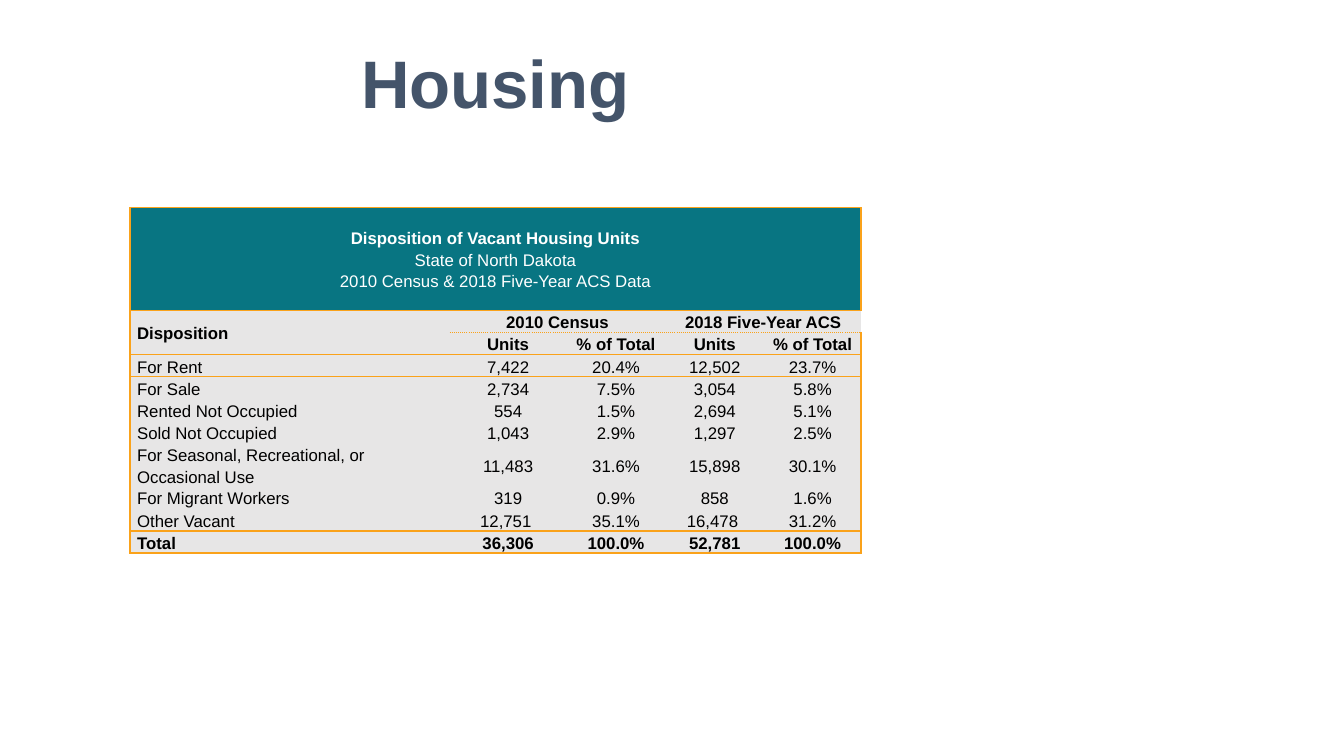
"""Build a slide with a table of vacant housing units in North Dakota."""
from pptx import Presentation
from pptx.dml.color import RGBColor
from pptx.enum.text import MSO_ANCHOR, PP_ALIGN
from pptx.oxml import parse_xml
from pptx.oxml.ns import nsdecls
from pptx.util import Inches, Pt

TITLE = "Housing"
HEADING = (
    "Disposition of Vacant Housing Units\n"
    "State of North Dakota\n"
    "2010 Census & 2018 Five-Year ACS Data"
)
ROWS = [
    (HEADING, "", "", "", ""),
    ("Disposition", "2010 Census", "", "2018 Five-Year ACS", ""),
    ("", "Units", "% of Total", "Units", "% of Total"),
    ("For Rent", "7,422", "20.4%", "12,502", "23.7%"),
    ("For Sale", "2,734", "7.5%", "3,054", "5.8%"),
    ("Rented Not Occupied", "554", "1.5%", "2,694", "5.1%"),
    ("Sold Not Occupied", "1,043", "2.9%", "1,297", "2.5%"),
    ("For Seasonal, Recreational, or Occasional Use", "11,483", "31.6%", "15,898", "30.1%"),
    ("For Migrant Workers", "319", "0.9%", "858", "1.6%"),
    ("Other Vacant", "12,751 ", "35.1%", "16,478 ", "31.2%"),
    ("Total", "36,306", "100.0%", "52,781", "100.0%"),
]
MERGES = [((0, 0), (0, 4)), ((1, 0), (2, 0)), ((1, 1), (1, 2)), ((1, 3), (1, 4))]
BOLD_ROWS = {1, 2, len(ROWS) - 1}
COLUMN_WIDTHS = [3.17, 1.16, 0.98, 0.98, 0.96]
HEADING_HEIGHT, ROW_HEIGHT = 1.02, 0.22
COLORS = {
    "title": "44546A",
    "heading": "087582",
    "body": "E7E6E6",
    "rule": "FAA21A",
    "white": "FFFFFF",
    "black": "000000",
}
FONT = "Arial"
THIN, DOTTED, THICK = (1, "solid"), (1, "sysDot"), (2.25, "solid")
RULES_ABOVE = {0: THIN, 1: THIN, 2: DOTTED, 3: THIN, len(ROWS) - 1: THICK, len(ROWS): THIN}
NO_GRID_STYLE = "{2D5ABB26-0587-4C30-8999-92F81FD0307C}"


def color(name):
    """Return a palette colour."""
    return RGBColor.from_string(COLORS[name])


def style_font(font, size, color_name, bold):
    """Set face, size, colour and weight."""
    font.name, font.size, font.bold = FONT, Pt(size), bold
    font.color.rgb = color(color_name)


def cell_rules(row, column):
    """Return the rules around a cell, in schema order."""
    inside_label = column == 0
    sides = {
        "L": THIN if column == 0 else None,
        "R": THIN if column == len(COLUMN_WIDTHS) - 1 or row == 0 else None,
        "T": None if inside_label and row == 2 else RULES_ABOVE.get(row),
        "B": None if inside_label and row == 1 else RULES_ABOVE.get(row + 1),
    }
    return [(side, rule) for side, rule in sides.items() if rule]


def draw_rules(cell, rules):
    """Add border lines ahead of the cell fill."""
    properties = cell._tc.get_or_add_tcPr()
    for position, (side, (width, dash)) in enumerate(rules):
        line = parse_xml(
            f'<a:ln{side} {nsdecls("a")} w="{Pt(width)}"><a:solidFill>'
            f'<a:srgbClr val="{COLORS["rule"]}"/></a:solidFill>'
            f'<a:prstDash val="{dash}"/></a:ln{side}>'
        )
        properties.insert(position, line)


def fill_cell(cell, row, column):
    """Write and format one table cell."""
    is_heading = row == 0
    cell.text = ROWS[row][column]
    cell.vertical_anchor = MSO_ANCHOR.MIDDLE
    cell.margin_left = cell.margin_right = Inches(0.07)
    cell.margin_top = cell.margin_bottom = 0
    cell.fill.solid()
    cell.fill.fore_color.rgb = color("heading" if is_heading else "body")
    for number, paragraph in enumerate(cell.text_frame.paragraphs):
        centred = is_heading or column > 0
        paragraph.alignment = PP_ALIGN.CENTER if centred else PP_ALIGN.LEFT
        paragraph.line_spacing = 1.15
        bold = number == 0 if is_heading else row in BOLD_ROWS
        style_font(paragraph.font, 12, "white" if is_heading else "black", bold)
    draw_rules(cell, cell_rules(row, column))


def add_title(slide):
    """Place the slide title."""
    title = slide.shapes.title
    title.left, title.top = Inches(0.28), Inches(0.33)
    title.width, title.height = Inches(9.27), Inches(0.96)
    title.text_frame.text = TITLE
    title.text_frame.vertical_anchor = MSO_ANCHOR.MIDDLE
    paragraph = title.text_frame.paragraphs[0]
    paragraph.alignment = PP_ALIGN.CENTER
    style_font(paragraph.font, 48, "title", True)


def add_vacancy_table(slide):
    """Place the table of vacant units."""
    heights = [HEADING_HEIGHT] + [ROW_HEIGHT] * (len(ROWS) - 1)
    frame = slide.shapes.add_table(
        len(ROWS), len(COLUMN_WIDTHS), Inches(1.29), Inches(2.06),
        Inches(sum(COLUMN_WIDTHS)), Inches(sum(heights)),
    )
    vacancies = frame.table
    vacancies._tbl.tblPr.find("{*}tableStyleId").text = NO_GRID_STYLE
    vacancies.horz_banding = False
    for column, width in zip(vacancies.columns, COLUMN_WIDTHS):
        column.width = Inches(width)
    for row, height in zip(vacancies.rows, heights):
        row.height = Inches(height)
    for row in range(len(ROWS)):
        for column in range(len(COLUMN_WIDTHS)):
            fill_cell(vacancies.cell(row, column), row, column)
    for first, last in MERGES:
        vacancies.cell(*first).merge(vacancies.cell(*last))


def main():
    """Build and save the slide."""
    deck = Presentation()
    deck.slide_width, deck.slide_height = Inches(13.33), Inches(7.5)
    slide = deck.slides.add_slide(deck.slide_layouts[5])
    add_title(slide)
    add_vacancy_table(slide)
    deck.save("out.pptx")


if __name__ == "__main__":
    main()
